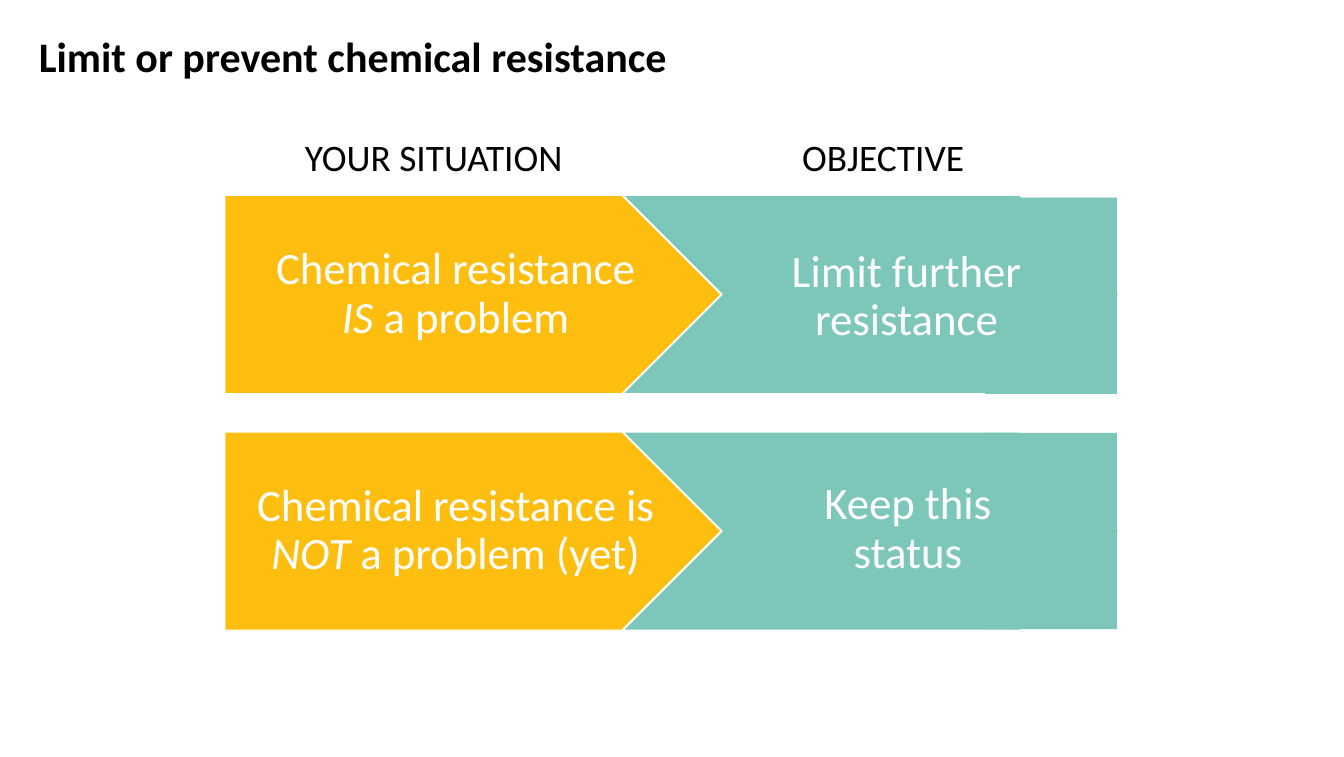
from pptx import Presentation
from pptx.dml.color import RGBColor
from pptx.enum.shapes import MSO_SHAPE as Shape
from pptx.enum.text import MSO_ANCHOR as Anchor, MSO_AUTO_SIZE as AutoSize, PP_ALIGN as Align
from pptx.util import Emu, Pt

PX = 9144  # EMU per px, 100 px to the inch
COLORS = {"situation": "FEBE10", "objective": "7CC7BA", "white": "FFFFFF", "black": "000000"}
FONT = "Calibri"

SITUATION_X, OBJECTIVE_X = 167, 463
ARROW_W, ARROW_H, POINT = 370, 148, 74


def px(value):
    return Emu(value * PX)


def color(name):
    return RGBColor.from_string(COLORS[name])


def write_text(box, spans, size=24, ink="white", bold=False, align=Align.CENTER,
               anchor=Anchor.TOP, insets=(10, 5, 10, 5)):
    """Fill a shape with one paragraph of (text, italic) spans; "\n" breaks the line."""
    frame = box.text_frame
    frame.word_wrap = True
    frame.vertical_anchor = anchor
    frame.margin_left, frame.margin_top, frame.margin_right, frame.margin_bottom = map(px, insets)
    para = frame.paragraphs[0]
    para.alignment = align
    para.line_spacing = 0.9
    for text, italic in spans:
        if text == "\n":
            para.add_line_break()
            continue
        span = para.add_run()
        span.text = text
        font = span.font
        font.name, font.size, font.bold, font.italic = FONT, Pt(size), bold, italic
        font.color.rgb = color(ink)


def add_label(page, text, left, top, width, height, grow=False, **style):
    box = page.shapes.add_textbox(px(left), px(top), px(width), px(height))
    write_text(box, [(text, False)], **style)
    if grow:
        box.text_frame.auto_size = AutoSize.SHAPE_TO_FIT_TEXT


def add_arrow(page, left, top, fill, notched=False):
    """Draw a right-pointing block, with a notch on its left side if wanted."""
    right, middle, bottom = left + ARROW_W, top + ARROW_H // 2, top + ARROW_H
    points = [(right - POINT, top), (right, middle), (right - POINT, bottom), (left, bottom)]
    if notched:
        points.append((left + POINT, middle))
    outline = page.shapes.build_freeform(left, top, scale=PX)
    outline.add_line_segments(points, close=True)
    arrow = outline.convert_to_shape()
    arrow.shadow.inherit = False
    arrow.fill.solid()
    arrow.fill.fore_color.rgb = color(fill)
    arrow.line.color.rgb = color("white")
    arrow.line.width = Pt(1)
    return arrow


def add_square_end(page, top):
    """Cover the objective arrow's point so that it ends square."""
    cover = page.shapes.add_shape(Shape.RECTANGLE, px(733), px(top), px(98), px(146))
    cover.shadow.inherit = False
    cover.fill.solid()
    cover.fill.fore_color.rgb = color("objective")
    cover.line.fill.background()


def add_row(page, top, situation, objective, cover_top, text_left, text_top):
    arrow = add_arrow(page, SITUATION_X, top, "situation")
    write_text(arrow, situation, anchor=Anchor.MIDDLE, insets=(14, 7, 40, 7))
    add_arrow(page, OBJECTIVE_X, top, "objective", notched=True)
    add_square_end(page, cover_top)
    add_label(page, objective, text_left, text_top, 215, 83, grow=True)


def main():
    deck = Presentation()
    deck.slide_width, deck.slide_height = px(1000), px(563)
    page = deck.slides.add_slide(deck.slide_layouts[6])

    # Title and column headings
    add_label(page, "Limit or prevent chemical resistance", 19, -1, 862, 90, size=22.5,
              ink="black", bold=True, align=Align.LEFT, anchor=Anchor.MIDDLE)
    for heading, left in (("YOUR SITUATION", 217), ("OBJECTIVE", 587)):
        add_label(page, heading, left, 99, 217, 66, size=20, ink="black", align=Align.LEFT)

    # Each situation leads to its objective
    add_row(page, 145,
            [("Chemical resistance", False), ("\n", False), ("IS", True), (" a problem", False)],
            "Limit further resistance", cover_top=147, text_left=567, text_top=180)
    add_row(page, 321,
            [("Chemical resistance is ", False), ("NOT", True), (" a problem (yet)", False)],
            "Keep this status", cover_top=322, text_left=568, text_top=353)

    deck.save("out.pptx")


if __name__ == "__main__":
    main()
